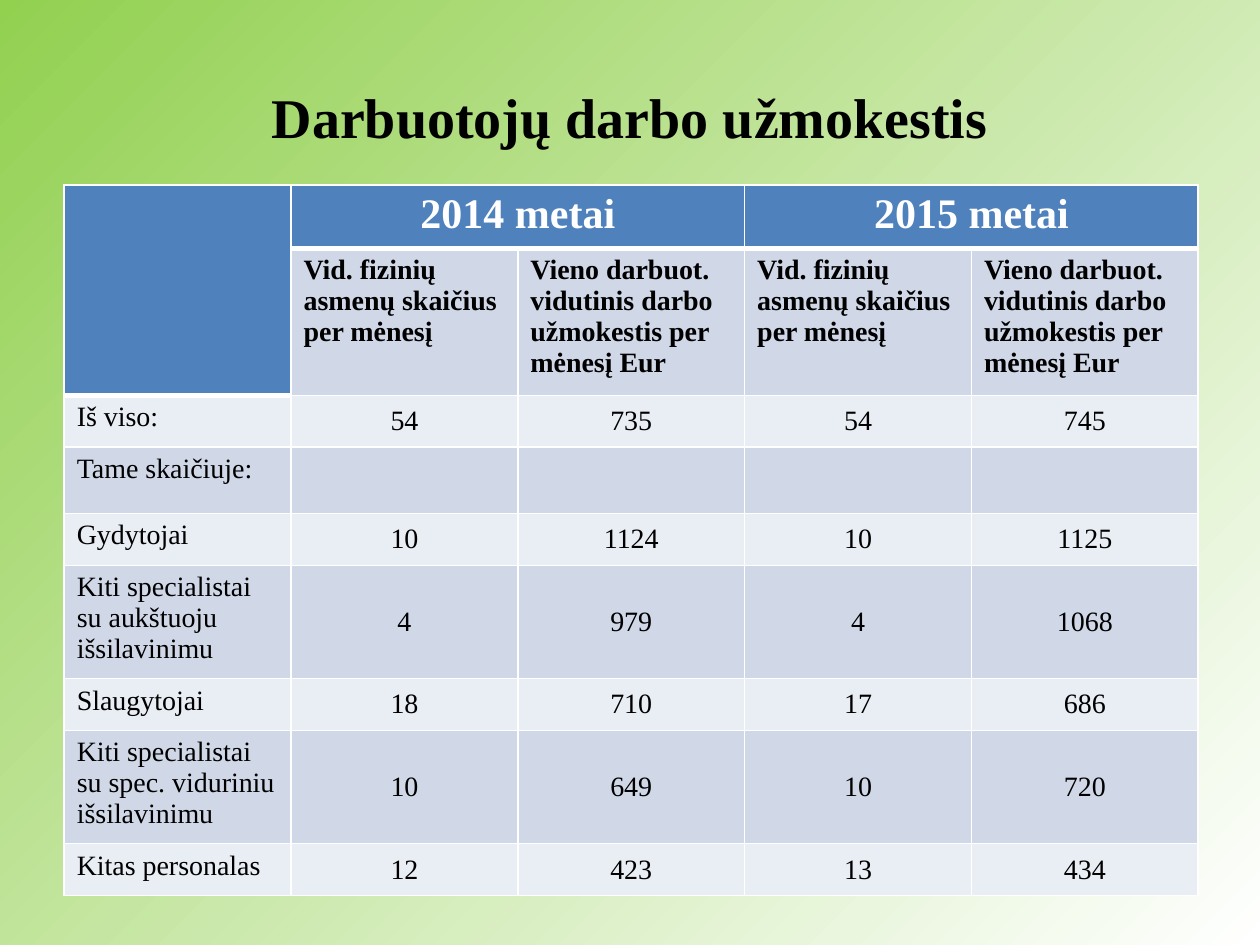
import lxml.etree
import pptx
import pptx.dml.color
import pptx.enum.text
import pptx.oxml.ns
import pptx.util

Inches = pptx.util.Inches
RGBColor = pptx.dml.color.RGBColor
ALIGN = pptx.enum.text.PP_ALIGN
ANCHOR = pptx.enum.text.MSO_ANCHOR

BLACK = RGBColor(0x00, 0x00, 0x00)
WHITE = RGBColor(0xFF, 0xFF, 0xFF)
GREEN = RGBColor(0x92, 0xD0, 0x50)
BLUE = RGBColor(0x4F, 0x81, 0xBD)
BAND_DARK = RGBColor(0xD0, 0xD8, 0xE8)
BAND_LIGHT = RGBColor(0xE9, 0xED, 0xF4)

YEARS = ["2014 metai", "2015 metai"]
MEASURES = [
    "Vid. fizinių asmenų skaičius per mėnesį",
    "Vieno darbuot. vidutinis darbo užmokestis per mėnesį Eur",
]
STAFF_ROWS = [
    ("Iš viso:", 54, 735, 54, 745),
    ("Tame skaičiuje:", "", "", "", ""),
    ("Gydytojai", 10, 1124, 10, 1125),
    ("Kiti specialistai su aukštuoju išsilavinimu", 4, 979, 4, 1068),
    ("Slaugytojai", 18, 710, 17, 686),
    ("Kiti specialistai su spec. viduriniu išsilavinimu", 10, 649, 10, 720),
    ("Kitas personalas", 12, 423, 13, 434),
]
ROW_HEIGHTS = [0.47, 1.08, 0.41, 0.53, 0.41, 0.84, 0.41, 0.84, 0.41]
COLUMN_WIDTH = 1.8


class SlideBuilder:
    """Draws styled elements on the current slide."""

    font_name = "Times New Roman"

    def __init__(self, slide):
        self.slide = slide

    def background(self, start, end):
        fill = self.slide.background.fill
        fill.gradient()
        fill.gradient_angle = 315
        for stop, color in zip(fill.gradient_stops, (start, end)):
            stop.color.rgb = color

    def text(self, frame, text, size, color=BLACK, bold=False, align=ALIGN.LEFT):
        paragraph = frame.paragraphs[0]
        paragraph.text = text
        paragraph.alignment = align
        paragraph.font.name = self.font_name
        paragraph.font.size = pptx.util.Pt(size)
        paragraph.font.bold = bold
        paragraph.font.color.rgb = color

    def title(self, text, left, top, width, height):
        box = self.slide.shapes.add_textbox(
            Inches(left), Inches(top), Inches(width), Inches(height))
        frame = box.text_frame
        frame.word_wrap = True
        frame.vertical_anchor = ANCHOR.MIDDLE
        self.text(frame, text, 32, bold=True, align=ALIGN.CENTER)

    def table(self, left, top, row_heights, column_count, column_width):
        frame = self.slide.shapes.add_table(
            len(row_heights), column_count, Inches(left), Inches(top),
            Inches(column_count * column_width), Inches(sum(row_heights)))
        table = frame.table
        for column in table.columns:
            column.width = Inches(column_width)
        for row, height in zip(table.rows, row_heights):
            row.height = Inches(height)
        return table

    def cell(self, cell, text, fill, size=16, anchor=ANCHOR.TOP,
             top_line=1, bottom_line=1, **font):
        self.borders(cell, L=1, R=1, T=top_line, B=bottom_line)
        cell.fill.solid()
        cell.fill.fore_color.rgb = fill
        cell.vertical_anchor = anchor
        self.text(cell.text_frame, text, size, **font)

    def borders(self, cell, **widths):
        qn = pptx.oxml.ns.qn
        properties = cell._tc.get_or_add_tcPr()
        for side, width in widths.items():
            line = lxml.etree.SubElement(
                properties, qn(f"a:ln{side}"), w=str(pptx.util.Pt(width)))
            solid = lxml.etree.SubElement(line, qn("a:solidFill"))
            lxml.etree.SubElement(solid, qn("a:srgbClr"), val=str(WHITE))


def fill_headings(builder, table):
    for row in range(2):
        builder.cell(table.cell(row, 0), "", BLUE, bottom_line=3)
    table.cell(0, 0).merge(table.cell(1, 0))

    span = len(MEASURES)
    for index, year in enumerate(YEARS):
        first = 1 + index * span
        for offset, measure in enumerate(MEASURES):
            builder.cell(table.cell(0, first + offset), "" if offset else year,
                         BLUE, size=24, bottom_line=3, color=WHITE, bold=True,
                         align=ALIGN.CENTER)
            builder.cell(table.cell(1, first + offset), measure, BAND_DARK,
                         top_line=3, bold=True)
        table.cell(0, first).merge(table.cell(0, first + span - 1))


def fill_staff(builder, table):
    for row, (label, *values) in enumerate(STAFF_ROWS, start=2):
        band = BAND_DARK if row % 2 else BAND_LIGHT
        builder.cell(table.cell(row, 0), label, band, top_line=3 if row == 2 else 1)
        for column, value in enumerate(values, start=1):
            builder.cell(table.cell(row, column), str(value), band,
                         anchor=ANCHOR.MIDDLE, align=ALIGN.CENTER)


def main():
    presentation = pptx.Presentation()
    presentation.slide_width = Inches(10)
    presentation.slide_height = Inches(7.5)
    slide = presentation.slides.add_slide(presentation.slide_layouts[6])
    builder = SlideBuilder(slide)
    builder.background(GREEN, WHITE)
    builder.title("Darbuotojų darbo užmokestis", 0.5, 0.3, 9, 1.25)
    column_count = 1 + len(YEARS) * len(MEASURES)
    table = builder.table(0.51, 1.47, ROW_HEIGHTS, column_count, COLUMN_WIDTH)
    fill_headings(builder, table)
    fill_staff(builder, table)
    presentation.save("out.pptx")


if __name__ == "__main__":
    main()
